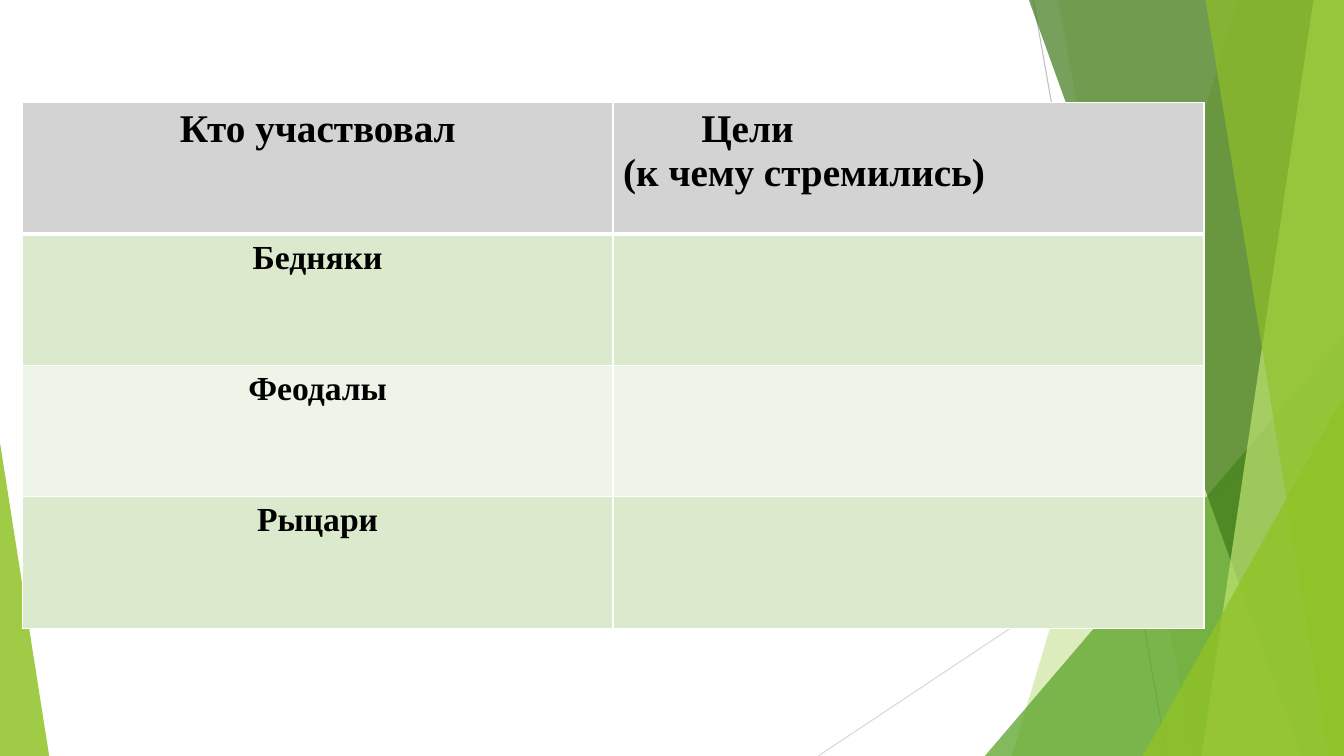
from lxml.etree import SubElement
from pptx import Presentation
from pptx.dml.color import RGBColor
from pptx.enum.shapes import MSO_CONNECTOR, MSO_SHAPE
from pptx.enum.text import PP_ALIGN
from pptx.oxml.ns import qn
from pptx.util import Cm, Pt

WIDTH, HEIGHT = 33.87, 19.05
FONT = "Times New Roman"
RAYS = [
    (26.04, 0, 29.41, HEIGHT, "BFBFBF"),
    (WIDTH, 10.24, 20.62, HEIGHT, "D9D9D9"),
]
BACK_PANELS = [(31.19, 25.5, "90C226", 30), (26.67, 30.05, "90C226", 20)]
FRONT_PANELS = [
    (25.93, 32.79, "3F7819", 70),
    (33.1, 30.28, "C0E474", 70),
    (30.38, 33.48, "90C226", 65),
]
PARTICIPANTS = [
    ("Бедняки", "DBE9CD"),
    ("Феодалы", "EEF4E8"),
    ("Рыцари", "DBE9CD"),
]


def color(hex_code):
    """Turn a hex string into a colour."""
    return RGBColor.from_string(hex_code)


def paint(facet, hex_code, opacity):
    """Give a facet a translucent fill without line or shadow."""
    facet.shadow.inherit = False
    facet.line.fill.background()
    facet.fill.solid()
    facet.fill.fore_color.rgb = color(hex_code)
    tint = facet.fill._xPr.find(".//" + qn("a:srgbClr"))
    SubElement(tint, qn("a:alpha"), val=str(opacity * 1000))


def add_ray(slide, x1, y1, x2, y2, hex_code):
    """Draw a thin straight line."""
    ray = slide.shapes.add_connector(
        MSO_CONNECTOR.STRAIGHT, Cm(x1), Cm(y1), Cm(x2), Cm(y2))
    ray.line.color.rgb = color(hex_code)
    ray.line.width = Pt(0.75)
    SubElement(ray._element.spPr, qn("a:effectLst"))


def add_panel(slide, top_x, bottom_x, hex_code, opacity):
    """Draw a slanted panel that reaches the right edge of the slide."""
    outline = slide.shapes.build_freeform(Cm(top_x), Cm(0))
    outline.add_line_segments([
        (Cm(WIDTH), Cm(0)), (Cm(WIDTH), Cm(HEIGHT)), (Cm(bottom_x), Cm(HEIGHT))])
    paint(outline.convert_to_shape(), hex_code, opacity)


def add_corner(slide, left, top, width, apex, hex_code, opacity):
    """Draw a triangle that stands on the bottom edge of the slide."""
    corner = slide.shapes.add_shape(
        MSO_SHAPE.ISOSCELES_TRIANGLE, Cm(left), Cm(top), Cm(width), Cm(HEIGHT - top))
    corner.adjustments[0] = apex
    paint(corner, hex_code, opacity)


def style_cell(cell, hex_code, top=1, bottom=1):
    """Set the white borders and the fill of a cell."""
    for side, points in (("L", 1), ("R", 1), ("T", top), ("B", bottom)):
        border = SubElement(
            cell._tc.get_or_add_tcPr(), qn(f"a:ln{side}"), w=str(Pt(points)))
        SubElement(SubElement(border, qn("a:solidFill")), qn("a:srgbClr"), val="FFFFFF")
    cell.fill.solid()
    cell.fill.fore_color.rgb = color(hex_code)


def write(paragraph, text, size, align=PP_ALIGN.CENTER, indent=0):
    """Add a bold black run to a paragraph."""
    paragraph.alignment = align
    paragraph._p.get_or_add_pPr().set("marL", str(Cm(indent)))
    run = paragraph.add_run()
    run.text = text
    run.font.name = FONT
    run.font.size = Pt(size)
    run.font.bold = True
    run.font.color.rgb = color("000000")


def add_goals_table(slide):
    """Build the table of participants and their goals."""
    rows = len(PARTICIPANTS) + 1
    table = slide.shapes.add_table(
        rows, 2, Cm(0.56), Cm(2.59), Cm(29.78), Cm(3.31 * rows)).table
    who, goals = table.cell(0, 0), table.cell(0, 1)
    for heading in (who, goals):
        style_cell(heading, "D3D3D3", bottom=3)
    write(who.text_frame.paragraphs[0], "Кто участвовал", 28)
    write(goals.text_frame.paragraphs[0], "Цели", 28, PP_ALIGN.LEFT, 1.97)
    write(goals.text_frame.add_paragraph(), "(к чему стремились)", 28, PP_ALIGN.LEFT)
    for row, (participant, band) in enumerate(PARTICIPANTS, 1):
        for column in range(2):
            style_cell(table.cell(row, column), band, top=3 if row == 1 else 1)
        write(table.cell(row, 0).text_frame.paragraphs[0], participant, 24)


def main():
    """Build and save the slide."""
    deck = Presentation()
    deck.slide_width, deck.slide_height = Cm(WIDTH), Cm(HEIGHT)
    slide = deck.slides.add_slide(deck.slide_layouts[6])
    for ray in RAYS:
        add_ray(slide, *ray)
    for panel in BACK_PANELS:
        add_panel(slide, *panel)
    add_corner(slide, 24.82, 8.46, 9.05, 1, "54A021", 72)
    for panel in FRONT_PANELS:
        add_panel(slide, *panel)
    add_corner(slide, 28.8, 9.98, 5.07, 1, "90C226", 80)
    add_corner(slide, 0, 11.15, 1.24, 0, "90C226", 85)
    add_goals_table(slide)
    deck.save("out.pptx")


if __name__ == "__main__":
    main()
